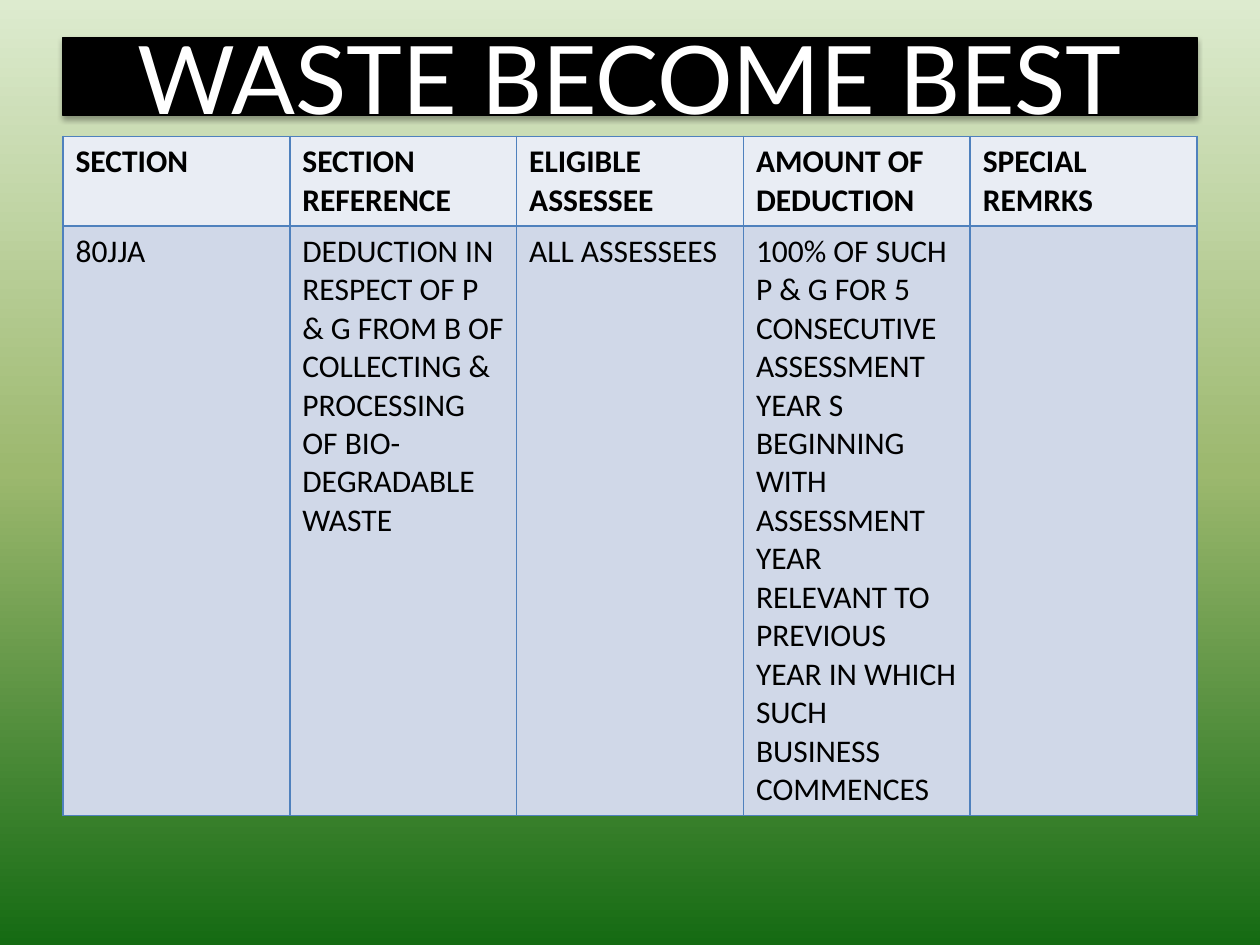
"""Build the slide on the tax deduction for processing waste."""
from copy import deepcopy

from lxml import etree
from pptx import Presentation
from pptx.dml.color import RGBColor
from pptx.enum.shapes import MSO_SHAPE
from pptx.enum.text import MSO_ANCHOR, PP_ALIGN
from pptx.oxml.ns import qn
from pptx.util import Cm, Pt

RECT = MSO_SHAPE.RECTANGLE
MIDDLE = MSO_ANCHOR.MIDDLE
CENTER = PP_ALIGN.CENTER

HUES = {
    "top": "DDEBCF", "mid": "9CB86E", "base": "156B13",
    "head": "E9EDF4", "body": "D0D8E8", "edge": "4F81BD",
    "black": "000000", "white": "FFFFFF",
}
HEAD = {"name": "Calibri", "size": Pt(18), "bold": True}
BODY = {"name": "Calibri", "size": Pt(18), "bold": False}
TITLE = {"name": "Lato", "size": Pt(54), "bold": False}
ROWS = [
    ("head", HEAD, Cm(1.8), [
        "SECTION", "SECTION REFERENCE", "ELIGIBLE ASSESSEE",
        "AMOUNT OF DEDUCTION", "SPECIAL REMRKS"]),
    ("body", BODY, Cm(11.87), [
        "80JJA",
        "DEDUCTION IN RESPECT OF P & G FROM B OF COLLECTING & PROCESSING "
        "OF BIO-DEGRADABLE WASTE",
        "ALL ASSESSEES",
        "100% OF SUCH P & G FOR 5 CONSECUTIVE ASSESSMENT YEAR S BEGINNING "
        "WITH ASSESSMENT YEAR RELEVANT TO PREVIOUS YEAR IN WHICH SUCH "
        "BUSINESS COMMENCES",
        ""]),
]
LEFT, WIDTH = Cm(1.27), Cm(22.86)


def style(font, form, hue):
    """Apply a dict of format values and a colour to a font."""
    for key, value in form.items():
        setattr(font, key, value)
    font.color.rgb = RGBColor.from_string(HUES[hue])


def add_node(parent, tag, **attrs):
    """Append a DrawingML element with the given attributes."""
    node = etree.SubElement(parent, qn(tag))
    for key, value in attrs.items():
        node.set(key, str(value))
    return node


prs = Presentation()
prs.slide_width, prs.slide_height = Cm(25.4), Cm(19.05)
slide = prs.slides.add_slide(prs.slide_layouts[6])

back = slide.background.fill
back.gradient()
back.gradient_angle = 270
stops = next(slide.element.iter(qn("a:gsLst")))
stops.append(deepcopy(stops[-1]))
for stop, hue, spot in zip(back.gradient_stops, ("top", "mid", "base"), (0, 0.5, 1)):
    stop.color.rgb = RGBColor.from_string(HUES[hue])
    stop.position = spot

frame = slide.shapes.add_table(
    len(ROWS), 5, LEFT, Cm(2.75), WIDTH, sum(row[2] for row in ROWS))
table = frame.table
for r, (hue, form, height, texts) in enumerate(ROWS):
    table.rows[r].height = height
    for c, text in enumerate(texts):
        cell = table.cell(r, c)
        props = cell._tc.get_or_add_tcPr()
        for side in "LRTB":
            line = add_node(props, f"a:ln{side}", w=Pt(1))
            add_node(add_node(line, "a:solidFill"), "a:srgbClr", val=HUES["edge"])
        cell.fill.solid()
        cell.fill.fore_color.rgb = RGBColor.from_string(HUES[hue])
        cell.text = text
        style(cell.text_frame.paragraphs[0].font, form, "black")

title = slide.shapes.add_shape(RECT, LEFT, Cm(0.76), WIDTH, Cm(1.57))
title.fill.solid()
title.fill.fore_color.rgb = RGBColor.from_string(HUES["black"])
title.line.color.rgb = RGBColor.from_string(HUES["black"])
title.line.width = Pt(0.75)
title.shadow.inherit = False
glow = add_node(
    title.element.spPr.find(qn("a:effectLst")), "a:outerShdw",
    blurRad=Pt(3.1), dist=Pt(1.8), dir=5400000, rotWithShape=0)
shade = add_node(glow, "a:srgbClr", val=HUES["black"])
add_node(shade, "a:alpha", val=35000)

box = title.text_frame
box.word_wrap = True
box.vertical_anchor = MIDDLE
box.text = "WASTE BECOME BEST"
box.paragraphs[0].alignment = CENTER
style(box.paragraphs[0].font, TITLE, "white")

prs.save("out.pptx")
